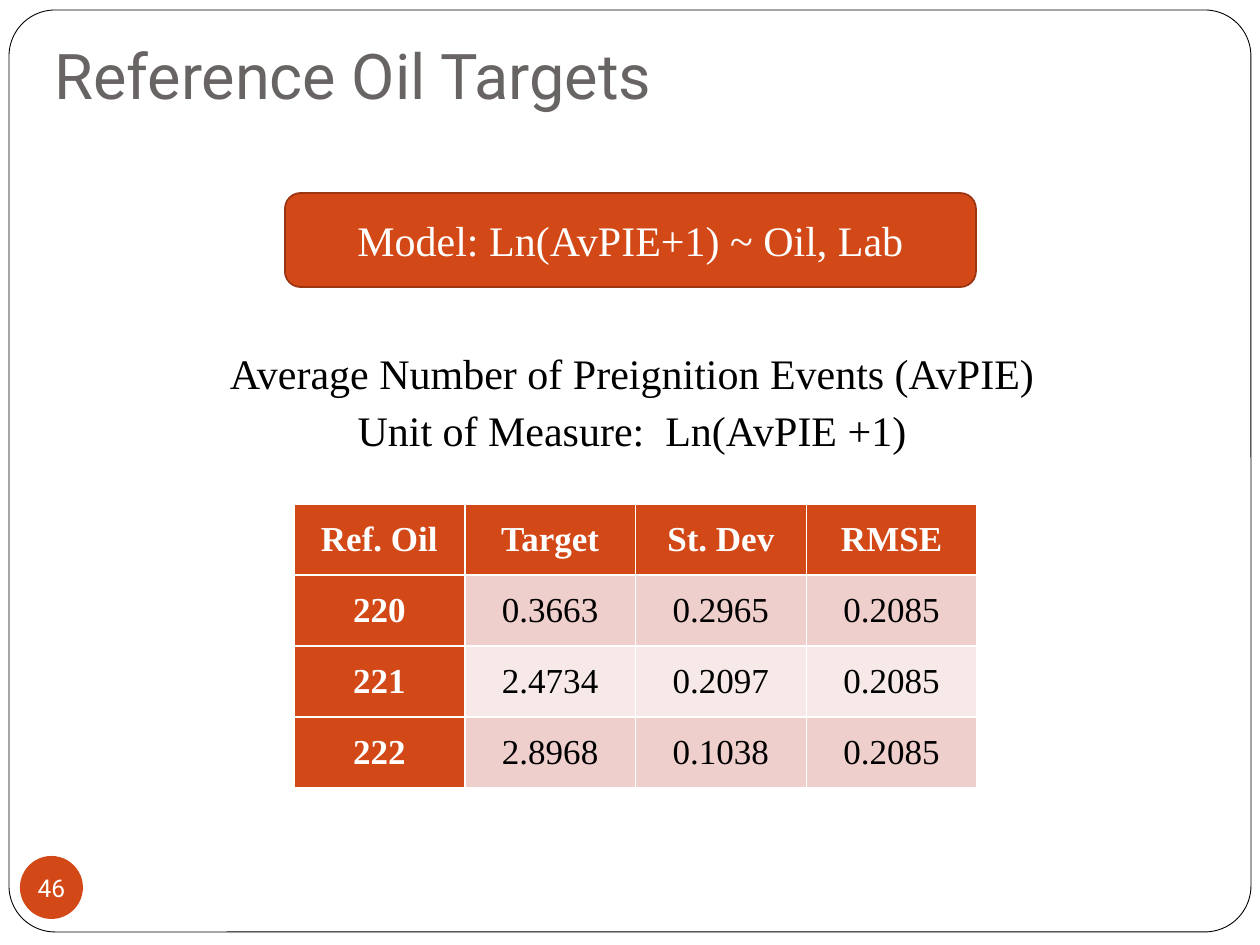
"""Build the slide of reference oil targets with its model banner and table."""
from pptx import Presentation
from pptx.dml.color import RGBColor
from pptx.enum.shapes import MSO_SHAPE as Shape
from pptx.enum.text import MSO_ANCHOR as Anchor, PP_ALIGN as Align
from pptx.util import Pt

PX = 914400 / 126
WHITE = RGBColor(0xFF, 0xFF, 0xFF)
BLACK = RGBColor(0, 0, 0)
GRAY = RGBColor(0x69, 0x64, 0x64)
ORANGE = RGBColor(0xD3, 0x48, 0x17)
RUST = RGBColor(0x9C, 0x35, 0x11)
BANDS = [RGBColor(0xEF, 0xCF, 0xCC), RGBColor(0xF7, 0xE9, 0xE8)]
SANS, SERIF = "Roboto", "Times New Roman"


def px(*lengths):
    return [round(length * PX) for length in lengths]


def write(frame, lines, size, color, name=SERIF, bold=False, align=Align.CENTER):
    for index, line in enumerate(lines):
        para = frame.add_paragraph() if index else frame.paragraphs[0]
        para.alignment = align
        span = para.add_run()
        span.text = line
        span.font.color.rgb = color
        for key, value in {"size": Pt(size), "name": name, "bold": bold}.items():
            setattr(span.font, key, value)


deck = Presentation()
deck.slide_width, deck.slide_height = px(1260, 945)
page = deck.slides.add_slide(deck.slide_layouts[6])

shapes = {}
for label, kind, place, fill, line, width in [
    ("frame", Shape.ROUNDED_RECTANGLE, (9, 10, 1242, 922), None, BLACK, 0.5),
    ("number", Shape.OVAL, (20, 856, 63, 63), ORANGE, None, 0),
    ("banner", Shape.ROUNDED_RECTANGLE, (285, 193, 691, 94), ORANGE, RUST, 1),
]:
    shape = page.shapes.add_shape(kind, *px(*place))
    shape.shadow.inherit = False
    if fill is None:
        shape.fill.background()
    else:
        shape.fill.solid()
        shape.fill.fore_color.rgb = fill
    if line is None:
        shape.line.fill.background()
    else:
        shape.line.color.rgb = line
        shape.line.width = Pt(width)
    shape.text_frame.vertical_anchor = Anchor.MIDDLE
    shapes[label] = shape
shapes["frame"].adjustments[0] = 0.05

number = shapes["number"].text_frame
for key in ("margin_left", "margin_top", "margin_right", "margin_bottom"):
    setattr(number, key, 0)
number.word_wrap = False
write(number, ["46"], 14, WHITE, SANS)
write(shapes["banner"].text_frame, ["Model: Ln(AvPIE+1) ~ Oil, Lab"], 24, WHITE)

title = page.shapes.add_textbox(*px(42, 40, 1071, 84)).text_frame
title_format = {"word_wrap": True, "vertical_anchor": Anchor.BOTTOM, "margin_bottom": px(12)[0]}
for key, value in title_format.items():
    setattr(title, key, value)
write(title, ["Reference Oil Targets"], 36, GRAY, SANS, align=Align.LEFT)

measure = page.shapes.add_textbox(*px(0, 341, 1220, 147)).text_frame
measure.word_wrap = True
write(measure, ["Average Number of Preignition Events (AvPIE)",
                "Unit of Measure:  Ln(AvPIE +1)"], 24, BLACK)
for para in measure.paragraphs:
    para.space_before = Pt(3.7)
    para._p.get_or_add_pPr().set("marL", str(px(44)[0]))

rows = [
    ["Ref. Oil", "Target", "St. Dev", "RMSE"],
    ["220", "0.3663", "0.2965", "0.2085"],
    ["221", "2.4734", "0.2097", "0.2085"],
    ["222", "2.8968", "0.1038", "0.2085"],
]
table = page.shapes.add_table(4, 4, *px(294, 504, 683, 284)).table
table.first_col = True
cell_format = {"vertical_anchor": Anchor.MIDDLE, "margin_left": px(9)[0],
               "margin_right": px(9)[0], "margin_top": 0, "margin_bottom": 0}
for r, row in enumerate(rows):
    for c, text in enumerate(row):
        cell = table.cell(r, c)
        for key, value in cell_format.items():
            setattr(cell, key, value)
        heading = r == 0 or c == 0
        write(cell.text_frame, [text], 20, WHITE if heading else BLACK, bold=heading)
        cell.fill.solid()
        cell.fill.fore_color.rgb = ORANGE if heading else BANDS[(r - 1) % 2]

deck.save("out.pptx")
